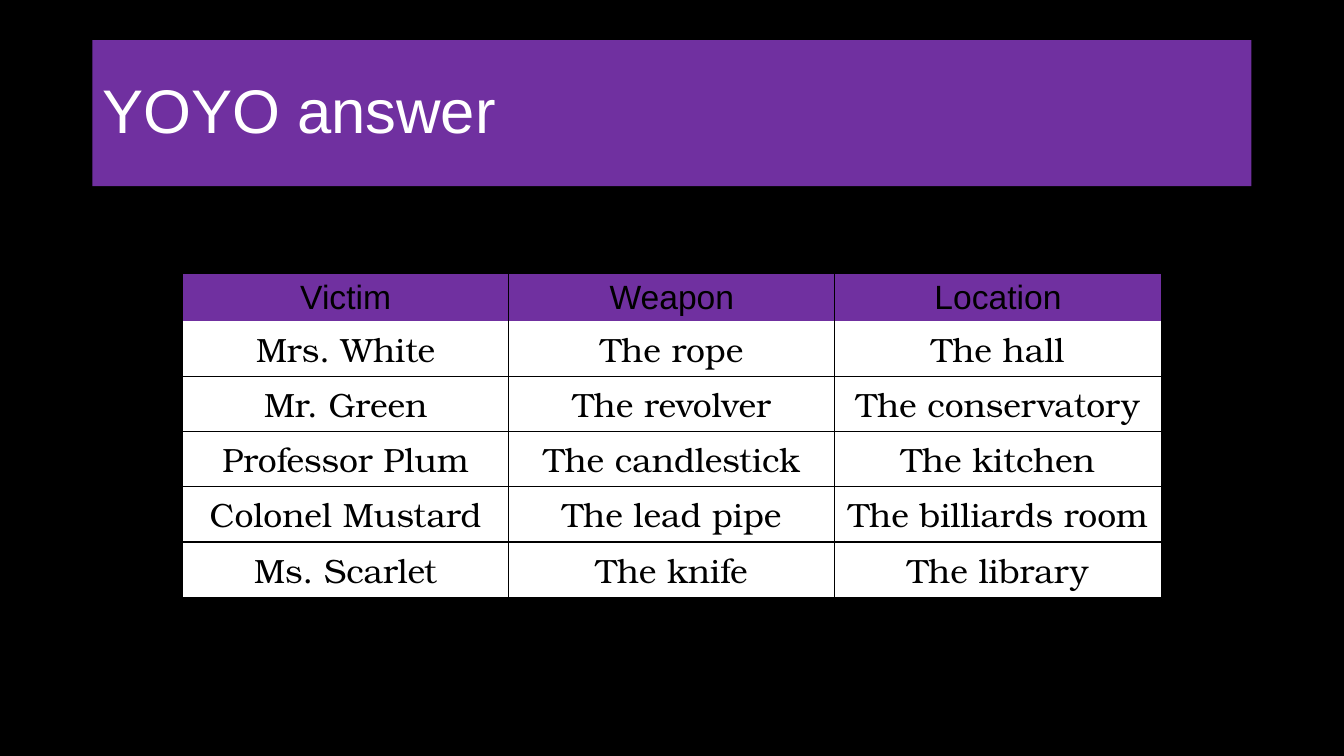
from lxml import etree
from pptx import Presentation
from pptx.dml.color import RGBColor
from pptx.enum.shapes import MSO_SHAPE
from pptx.enum.text import MSO_ANCHOR, PP_ALIGN
from pptx.oxml.ns import qn
from pptx.util import Cm, Pt

RECT = MSO_SHAPE.RECTANGLE
MIDDLE = MSO_ANCHOR.MIDDLE
LEFT, CENTER = PP_ALIGN.LEFT, PP_ALIGN.CENTER

BLACK = RGBColor(0x00, 0x00, 0x00)
WHITE = RGBColor(0xFF, 0xFF, 0xFF)
PURPLE = RGBColor(0x70, 0x30, 0xA0)

SANS, SERIF = "Arial", "TeX Gyre Bonum"

ANSWERS = [
    ("Victim", "Weapon", "Location"),
    ("Mrs. White", "The rope", "The hall"),
    ("Mr. Green", "The revolver", "The conservatory"),
    ("Professor Plum", "The candlestick", "The kitchen"),
    ("Colonel Mustard", "The lead pipe", "The billiards room"),
    ("Ms. Scarlet", "The knife", "The library"),
]


class Deck:
    def __init__(self):
        self.prs = Presentation()
        self.prs.slide_width, self.prs.slide_height = Cm(33.87), Cm(19.05)
        self.slide = self.prs.slides.add_slide(self.prs.slide_layouts[6])
        fill = self.slide.background.fill
        fill.solid()
        fill.fore_color.rgb = BLACK

    def label(self, frame, text, face, size, color, align):
        frame.text = text
        para = frame.paragraphs[0]
        para.alignment = align
        para.font.name = face
        para.font.size = Pt(size)
        para.font.color.rgb = color
        return para

    def title(self, text, left, top, width, height):
        bar = self.slide.shapes.add_shape(
            RECT, Cm(left), Cm(top), Cm(width), Cm(height))
        bar.shadow.inherit = False
        bar.fill.solid()
        bar.fill.fore_color.rgb = PURPLE
        bar.line.fill.background()
        bar.text_frame.word_wrap = True
        bar.text_frame.vertical_anchor = MIDDLE
        para = self.label(bar.text_frame, text, SANS, 44, WHITE, LEFT)
        para.line_spacing = 0.9

    def border(self, cell, side, shown):
        line = etree.SubElement(cell._tc.get_or_add_tcPr(), qn("a:ln" + side))
        if shown:
            line.set("w", str(Pt(1)))
            fill = etree.SubElement(line, qn("a:solidFill"))
            etree.SubElement(fill, qn("a:srgbClr"), val=str(BLACK))
        else:
            etree.SubElement(line, qn("a:noFill"))

    def table(self, rows, left, top, width, height):
        last, end = len(rows) - 1, len(rows[0]) - 1
        grid = self.slide.shapes.add_table(
            last + 1, end + 1, Cm(left), Cm(top), Cm(width), Cm(height)).table
        grid.first_row = grid.horz_banding = False
        for r, row in enumerate(rows):
            for c, text in enumerate(row):
                cell = grid.cell(r, c)
                # Lines only between columns and between body rows
                sides = {"L": c > 0, "R": c < end,
                         "T": r > 1, "B": 0 < r < last}
                for side, shown in sides.items():
                    self.border(cell, side, shown)
                cell.fill.solid()
                cell.fill.fore_color.rgb = WHITE if r else PURPLE
                face = SERIF if r else SANS
                self.label(cell.text_frame, text, face, 24, BLACK, CENTER)


def main():
    deck = Deck()
    # Title bar
    deck.title("YOYO answer", 2.33, 1.01, 29.21, 3.68)
    # Answer table
    deck.table(ANSWERS, 4.6, 6.9, 24.66, 6.24)
    deck.prs.save("out.pptx")


if __name__ == "__main__":
    main()
